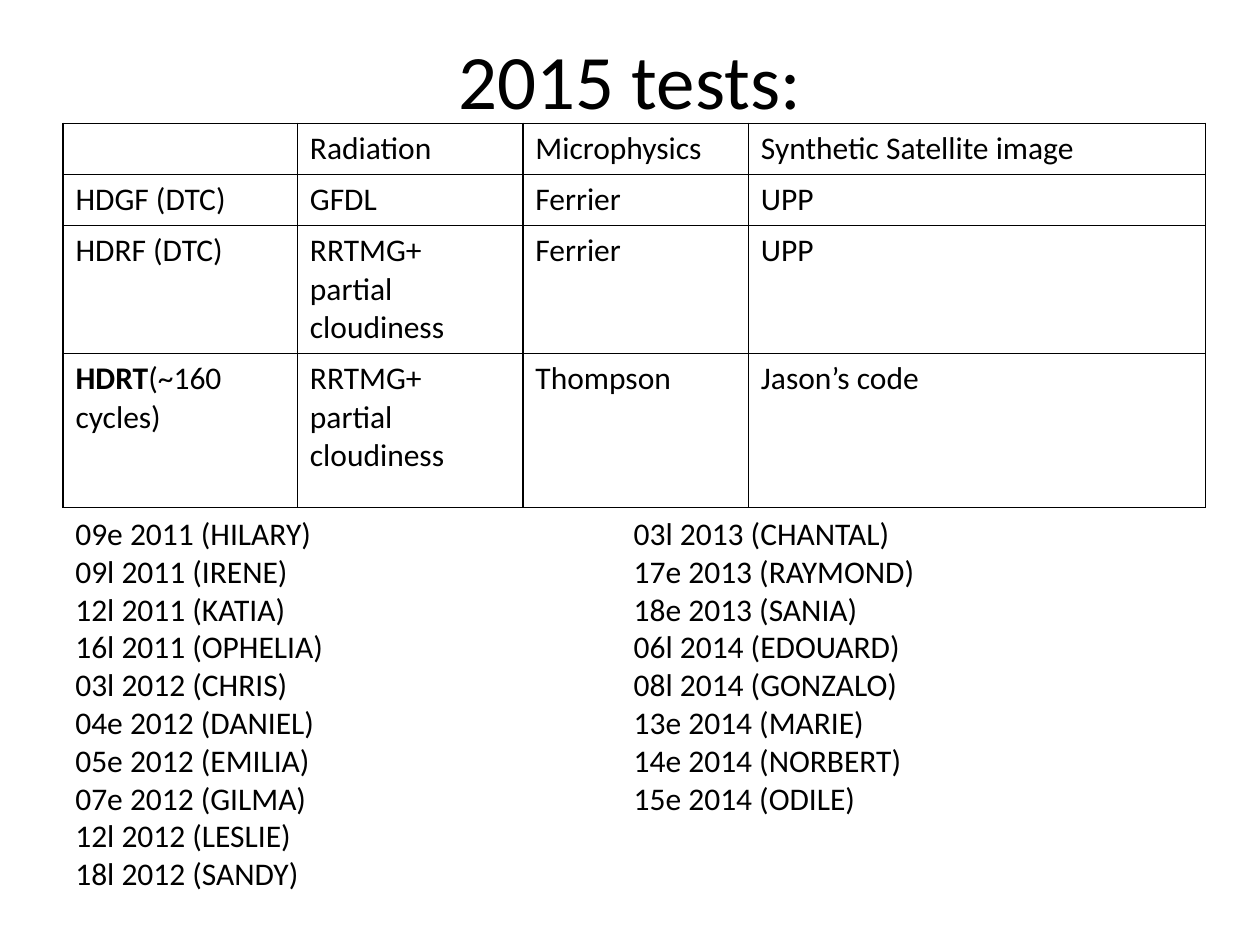
from lxml.etree import SubElement
from pptx import Presentation
from pptx.dml.color import RGBColor
from pptx.enum.text import MSO_ANCHOR, PP_ALIGN
from pptx.oxml.ns import qn
from pptx.util import Inches, Pt


def style(para, size=18):
    """Set the font of a paragraph."""
    font = para.font
    font.name, font.size = "Calibri", Pt(size)
    font.color.rgb = RGBColor.from_string("000000")


def border(cell):
    """Draw a thin black line on all four sides of a cell."""
    props = cell._tc.get_or_add_tcPr()
    for index, side in enumerate(("a:lnL", "a:lnR", "a:lnT", "a:lnB")):
        line = SubElement(props, qn(side), w=str(Pt(1)))
        fill = SubElement(line, qn("a:solidFill"))
        SubElement(fill, qn("a:srgbClr"), val="000000")
        props.remove(line)
        props.insert(index, line)


deck = Presentation()
deck.slide_width, deck.slide_height = Inches(10), Inches(7.5)
slide = deck.slides.add_slide(deck.slide_layouts[5])

title = slide.shapes.title
title.left, title.top = Inches(0.5), Inches(0)
title.width, title.height = Inches(9), Inches(1.25)
title.text_frame.text = "2015 tests:"
title.text_frame.vertical_anchor = MSO_ANCHOR.MIDDLE
head = title.text_frame.paragraphs[0]
head.alignment = PP_ALIGN.CENTER
style(head, 44)

cloudy = "RRTMG+\npartial cloudiness"
tests = [
    ["", "Radiation", "Microphysics", "Synthetic Satellite image "],
    ["HDGF (DTC)", "GFDL", "Ferrier", "UPP"],
    ["HDRF (DTC)", cloudy, "Ferrier", "UPP"],
    ["HDRT", cloudy, "Thompson", "Jason’s code"],
]
frame = slide.shapes.add_table(
    4, 4, Inches(0.5), Inches(0.98), Inches(9.06), Inches(3.02))
table = frame.table
table.first_row = table.horz_banding = False
for column, width in zip(table.columns, (1.86, 1.79, 1.79, 3.63)):
    column.width = Inches(width)
for row, height, texts in zip(table.rows, (0.27, 0.38, 0.94, 1.22), tests):
    row.height = Inches(height)
    for cell, text in zip(row.cells, texts):
        cell.text = text
        cell.fill.background()
        border(cell)
        for para in cell.text_frame.paragraphs:
            style(para)
frame.height = Inches(3.02)

label = table.cell(3, 0).text_frame.paragraphs[0]
label.runs[0].font.bold = True
label.add_run().text = "(~160 cycles)"

storms = [
    "09e 2011 (HILARY)", "09l 2011 (IRENE)", "12l 2011 (KATIA)",
    "16l 2011 (OPHELIA)", "03l 2012 (CHRIS) ", "04e 2012 (DANIEL)",
    "05e 2012 (EMILIA)", "07e 2012 (GILMA)", "12l 2012 (LESLIE)",
    "18l 2012 (SANDY)", "03l 2013 (CHANTAL)", "17e 2013 (RAYMOND)",
    "18e 2013 (SANIA)", "06l 2014 (EDOUARD)", "08l 2014 (GONZALO) ",
    "13e 2014 (MARIE)", "14e 2014 (NORBERT)", "15e 2014 (ODILE)",
]
box = slide.shapes.add_textbox(
    Inches(0.5), Inches(4.03), Inches(9.06), Inches(3.35))
body = box.text_frame
body.word_wrap = True
body._txBody.bodyPr.set("numCol", "2")
body.text = "\n".join(storms)
for para in body.paragraphs:
    style(para)

deck.save("out.pptx")
